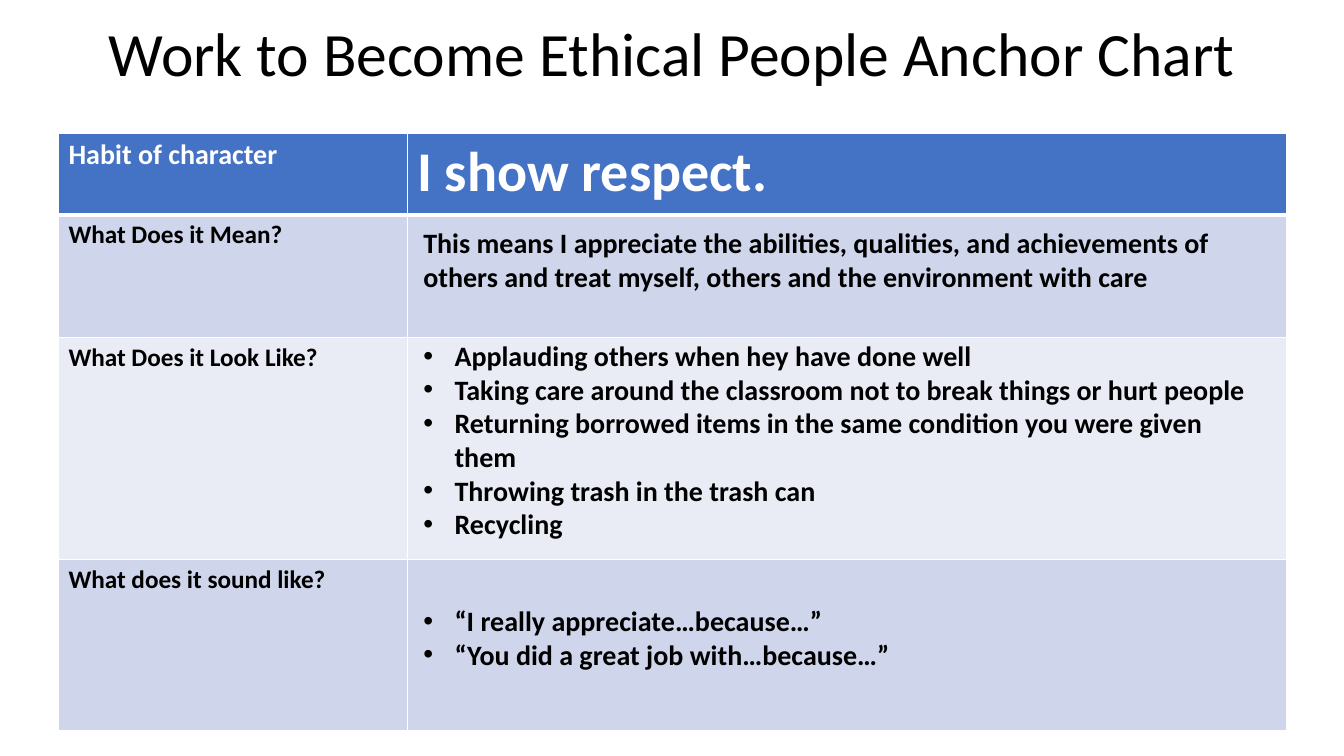
from lxml.etree import SubElement
from pptx import Presentation
from pptx.dml.color import RGBColor
from pptx.enum.text import MSO_ANCHOR as Anchor, MSO_AUTO_SIZE as AutoSize, PP_ALIGN as Align
from pptx.oxml.ns import qn
from pptx.util import Inches, Pt

BLACK = RGBColor(0x00, 0x00, 0x00)
WHITE = RGBColor(0xFF, 0xFF, 0xFF)
HEADER_BLUE = RGBColor(0x44, 0x72, 0xC4)
BAND_DARK = RGBColor(0xCF, 0xD5, 0xEA)
BAND_LIGHT = RGBColor(0xE9, 0xEB, 0xF5)

COLUMN_WIDTHS = (3.46, 8.72)
ROW_HEIGHTS = (0.81, 1.22, 2.2, 1.7)
QUESTIONS = ("What Does it Mean?", "What Does it Look Like?", "What does it sound like?")
MEANING = ("This means I appreciate the abilities, qualities, and achievements of "
           "others and treat myself, others and the environment with care")
LOOKS_LIKE = (
    "Applauding others when hey have done well",
    "Taking care around the classroom not to break things or hurt people",
    "Returning borrowed items in the same condition you were given them",
    "Throwing trash in the trash can",
    "Recycling",
)
SOUNDS_LIKE = ("“I really appreciate…because…”", "“You did a great job with…because…”")


def write(frame, *lines, size=20, color=BLACK, bold=True, align=Align.LEFT,
          spacing=None, bullet=False):
    for index, line in enumerate(lines):
        paragraph = frame.add_paragraph() if index else frame.paragraphs[0]
        paragraph.alignment = align
        paragraph.line_spacing = spacing
        if bullet:
            add_bullet(paragraph)
        run = paragraph.add_run()
        run.text = line
        font = run.font
        font.name, font.size, font.bold = "Calibri", Pt(size), bold
        font.color.rgb = color


def add_bullet(paragraph):
    properties = paragraph._p.get_or_add_pPr()
    indent = Inches(0.31)
    properties.set("marL", str(indent))
    properties.set("indent", str(-indent))
    SubElement(properties, qn("a:buFont"), typeface="Arial")
    SubElement(properties, qn("a:buChar"), char="•")


def add_borders(cell, **widths):
    """Draw white borders; widths maps the sides L, R, T and B to points."""
    properties = cell._tc.get_or_add_tcPr()
    for side, width in widths.items():
        line = SubElement(properties, qn(f"a:ln{side}"), w=str(Pt(width)))
        fill = SubElement(line, qn("a:solidFill"))
        SubElement(fill, qn("a:srgbClr"), val=str(WHITE))


class AnchorChart:
    def __init__(self, slide):
        self.slide = slide

    def text_box(self, left, top, width, height, *lines, anchor=Anchor.TOP,
                 auto_size=AutoSize.SHAPE_TO_FIT_TEXT, **style):
        box = self.slide.shapes.add_textbox(*map(Inches, (left, top, width, height)))
        frame = box.text_frame
        frame.word_wrap = True
        frame.auto_size = auto_size
        frame.vertical_anchor = anchor
        write(frame, *lines, **style)

    def table(self, left, top, widths, heights):
        bounds = map(Inches, (left, top, sum(widths), sum(heights)))
        table = self.slide.shapes.add_table(len(heights), len(widths), *bounds).table
        for column, width in zip(table.columns, widths):
            column.width = Inches(width)
        for index, (row, height) in enumerate(zip(table.rows, heights)):
            row.height = Inches(height)
            for cell in row.cells:
                self.style_cell(cell, index)
        return table

    def style_cell(self, cell, row):
        add_borders(cell, L=1, R=1, T=3 if row == 1 else 1, B=3 if row == 0 else 1)
        cell.fill.solid()
        band = BAND_DARK if row % 2 else BAND_LIGHT
        cell.fill.fore_color.rgb = band if row else HEADER_BLUE


def main():
    presentation = Presentation()
    presentation.slide_width = Inches(13.33)
    presentation.slide_height = Inches(7.5)
    chart = AnchorChart(presentation.slides.add_slide(presentation.slide_layouts[6]))

    chart.text_box(0.92, 0.08, 11.5, 0.96, "Work to Become Ethical People Anchor Chart",
                   anchor=Anchor.MIDDLE, auto_size=AutoSize.NONE, size=44,
                   bold=False, align=Align.CENTER, spacing=0.9)

    habits = chart.table(0.58, 1.32, COLUMN_WIDTHS, ROW_HEIGHTS)
    write(habits.cell(0, 0).text_frame, "Habit of character", color=WHITE)
    write(habits.cell(0, 1).text_frame, "I show respect.", size=40, color=WHITE)
    for row, question in enumerate(QUESTIONS, start=1):
        write(habits.cell(row, 0).text_frame, question, size=18)

    chart.text_box(4.1, 2.19, 8.28, 0.77, MEANING)
    chart.text_box(4.1, 3.31, 8.35, 2.12, *LOOKS_LIKE, bullet=True)
    chart.text_box(4.1, 5.94, 8.35, 0.77, *SOUNDS_LIKE, bullet=True)
    presentation.save("out.pptx")


if __name__ == "__main__":
    main()
